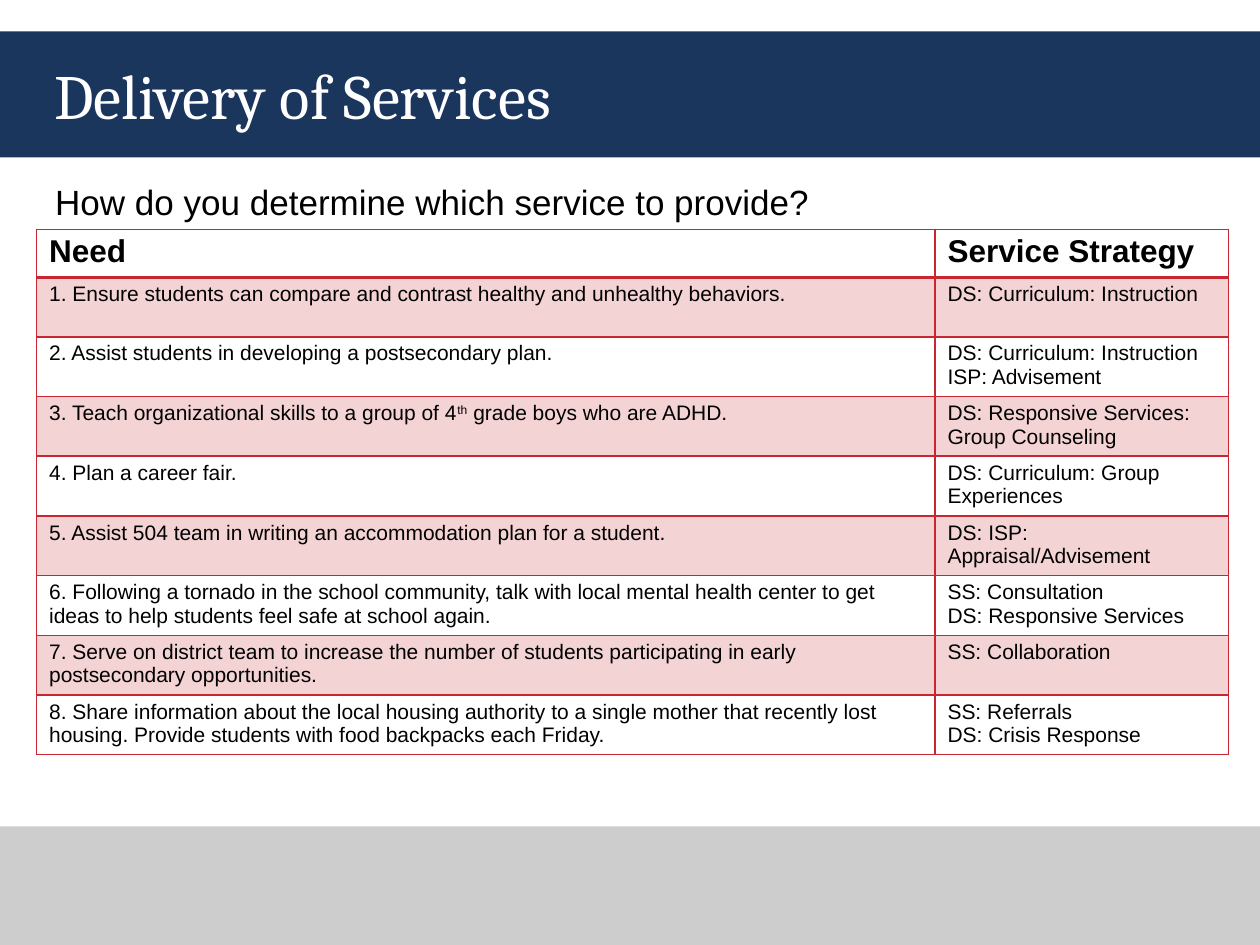
from lxml import etree
from pptx import Presentation
from pptx.dml.color import RGBColor
from pptx.enum.shapes import MSO_SHAPE
from pptx.enum.text import MSO_ANCHOR, PP_ALIGN
from pptx.oxml.ns import qn
from pptx.util import Inches, Pt

RECTANGLE = MSO_SHAPE.RECTANGLE
TOP, MIDDLE = MSO_ANCHOR.TOP, MSO_ANCHOR.MIDDLE
LEFT = PP_ALIGN.LEFT

# Content: each cell is a list of paragraphs, ^ marks a superscript part
TITLE = "Delivery of Services"
QUESTION = "How do you determine which service to provide?"
HEADER = (["Need"], ["Service Strategy"])
ROWS = [
    (["1. Ensure students can compare and contrast healthy and unhealthy behaviors."],
     ["DS: Curriculum: Instruction"]),
    (["2. Assist students in developing a postsecondary plan."],
     ["DS: Curriculum: Instruction", "ISP: Advisement"]),
    (["3. Teach organizational skills to a group of 4^th^ grade boys who are ADHD."],
     ["DS: Responsive Services: Group Counseling"]),
    (["4. Plan a career fair."],
     ["DS: Curriculum: Group Experiences"]),
    (["5. Assist 504 team in writing an accommodation plan for a student."],
     ["DS: ISP: Appraisal/Advisement"]),
    (["6. Following a tornado in the school community, talk with local mental health "
      "center to get ideas to help students feel safe at school again."],
     ["SS: Consultation", "DS: Responsive Services"]),
    (["7. Serve on district team to increase the number of students participating in "
      "early postsecondary opportunities."],
     ["SS: Collaboration"]),
    (["8. Share information about the local housing authority to a single mother that "
      "recently lost housing. Provide students with food backpacks each Friday."],
     ["SS: Referrals", "DS: Crisis Response"]),
]

THEME = {
    "heading_font": "Cambria", "body_font": "Arial",
    "navy": "1B365D", "gray": "CDCDCD", "red": "C82630",
    "white": "FFFFFF", "black": "000000",
    "title": 36, "question": 20, "header": 18, "body": 12,
    "tint": 20, "rule": 1, "header_rule": 2,
}

# Layout in inches
BANDS = [(0.25, 1, "navy"), (6.56, 0.94, "gray")]
TABLE_LEFT, TABLE_TOP, TABLE_HEIGHT = 0.29, 1.82, 4.17
COLUMN_WIDTHS = (7.13, 2.33)
HEADER_HEIGHT = 0.38
BODY_HEIGHT = (TABLE_HEIGHT - HEADER_HEIGHT) / len(ROWS)
CELL_MARGIN = 0.04


def color(name):
    return RGBColor.from_string(THEME[name])


def write(frame, paragraphs, size="body", font="body_font", ink="black",
          bold=False, anchor=TOP):
    frame.word_wrap = True
    frame.vertical_anchor = anchor
    for index, text in enumerate(paragraphs):
        paragraph = frame.paragraphs[0] if index == 0 else frame.add_paragraph()
        paragraph.alignment = LEFT
        for part, piece in enumerate(text.split("^")):
            run = paragraph.add_run()
            run.text = piece
            run.font.size = Pt(THEME[size])
            run.font.name = THEME[font]
            run.font.color.rgb = color(ink)
            run.font.bold = bold
            if part % 2:
                run.font._element.set("baseline", "30000")


def set_borders(cell, bottom, top):
    properties = cell._tc.get_or_add_tcPr()
    widths = {"lnL": THEME["rule"], "lnR": THEME["rule"], "lnT": top, "lnB": bottom}
    for index, (tag, width) in enumerate(widths.items()):
        line = etree.Element(qn(f"a:{tag}"), w=str(Pt(width)))
        fill = etree.SubElement(line, qn("a:solidFill"))
        etree.SubElement(fill, qn("a:srgbClr"), val=THEME["red"])
        properties.insert(index, line)


def fill_cell(cell, tinted):
    if not tinted:
        cell.fill.background()
        return
    cell.fill.solid()
    cell.fill.fore_color.rgb = color("red")
    red = cell._tc.tcPr.find(f".//{qn('a:srgbClr')}")
    etree.SubElement(red, qn("a:alpha"), val=str(THEME["tint"] * 1000))


def add_bands(slide, width):
    for top, height, fill in BANDS:
        band = slide.shapes.add_shape(RECTANGLE, 0, Inches(top), width, Inches(height))
        band.shadow.inherit = False
        band.fill.solid()
        band.fill.fore_color.rgb = color(fill)
        band.line.fill.background()
        # Keep the bands behind the title
        slide.shapes.title.element.addprevious(band.element)


def add_services_table(slide):
    rows = [HEADER] + ROWS
    table = slide.shapes.add_table(
        len(rows), len(COLUMN_WIDTHS), Inches(TABLE_LEFT), Inches(TABLE_TOP),
        Inches(sum(COLUMN_WIDTHS)), Inches(TABLE_HEIGHT)).table
    for column, width in zip(table.columns, COLUMN_WIDTHS):
        column.width = Inches(width)
    for row_index, row in enumerate(rows):
        is_header = row_index == 0
        table.rows[row_index].height = Inches(HEADER_HEIGHT if is_header else BODY_HEIGHT)
        for column_index, paragraphs in enumerate(row):
            cell = table.cell(row_index, column_index)
            cell.margin_top = cell.margin_bottom = Inches(CELL_MARGIN)
            write(cell.text_frame, paragraphs, size="header" if is_header else "body",
                  bold=is_header)
            cell.vertical_anchor = TOP
            fill_cell(cell, tinted=row_index % 2 == 1)
            set_borders(cell, THEME["header_rule" if is_header else "rule"],
                        THEME["header_rule" if row_index == 1 else "rule"])


def main():
    presentation = Presentation()
    presentation.slide_width, presentation.slide_height = Inches(10), Inches(7.5)
    slide = presentation.slides.add_slide(presentation.slide_layouts[5])

    # Bands and title
    add_bands(slide, presentation.slide_width)
    title = slide.shapes.title
    title.left, title.top = Inches(0.33), Inches(0.25)
    title.width, title.height = Inches(9.08), Inches(1)
    write(title.text_frame, [TITLE], size="title", font="heading_font",
          ink="white", anchor=MIDDLE)

    # Services table and the question above it
    add_services_table(slide)
    question = slide.shapes.add_textbox(Inches(0.34), Inches(1.38), Inches(7.5), Inches(0.44))
    write(question.text_frame, [QUESTION], size="question")

    presentation.save("out.pptx")


if __name__ == "__main__":
    main()
